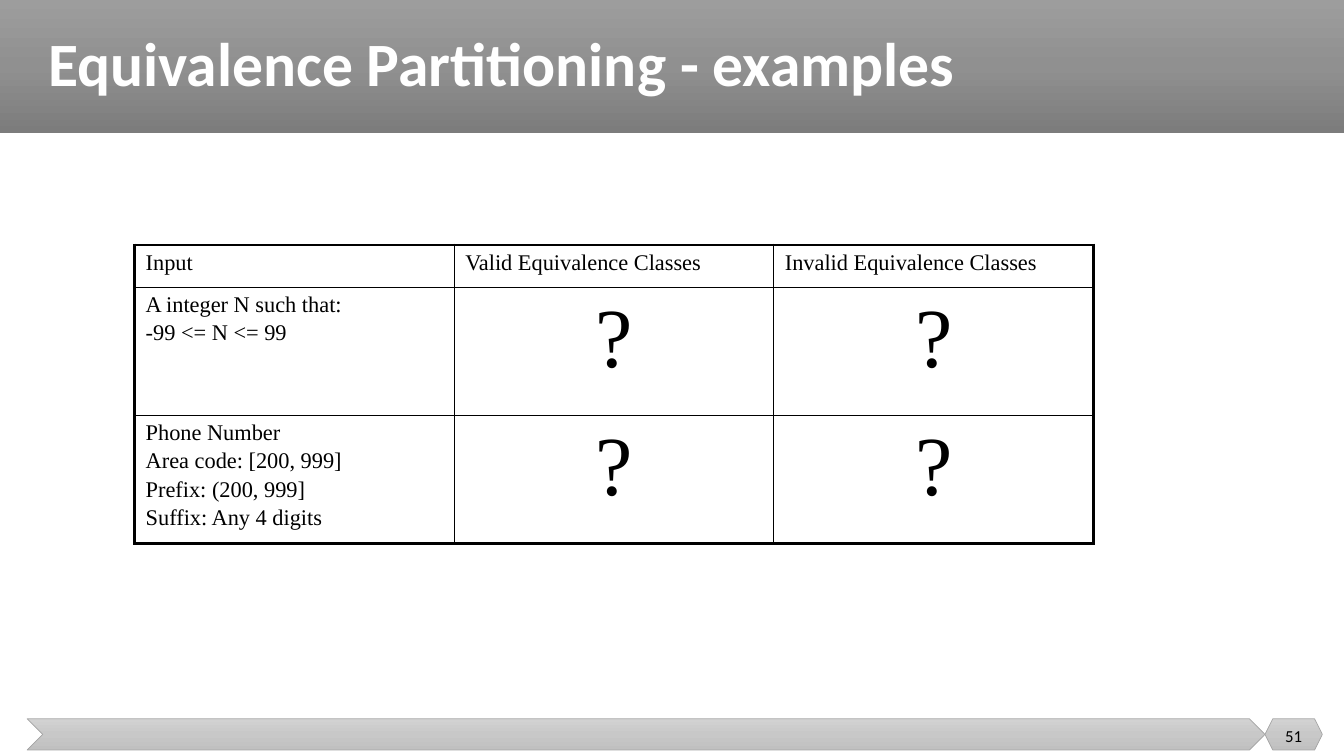
from copy import deepcopy
from lxml import etree
from pptx import Presentation
from pptx.dml.color import RGBColor
from pptx.enum.shapes import MSO_SHAPE
from pptx.enum.text import MSO_ANCHOR, PP_ALIGN
from pptx.oxml.ns import qn
from pptx.util import Pt

RECT, CHEVRON, HEXAGON = MSO_SHAPE.RECTANGLE, MSO_SHAPE.CHEVRON, MSO_SHAPE.HEXAGON
MIDDLE, LEFT, CENTER = MSO_ANCHOR.MIDDLE, PP_ALIGN.LEFT, PP_ALIGN.CENTER

# Content
TITLE = "Equivalence Partitioning - examples"
PAGE = "51"
ROWS = [
    ["Input", "Valid Equivalence Classes", "Invalid Equivalence Classes"],
    ["A integer N such that:\n-99 <= N <= 99", "?", "?"],
    ["Phone Number\nArea code: [200, 999]\nPrefix: (200, 999]\nSuffix: Any 4 digits", "?", "?"],
]

# Layout, in points
WIDTH, HEIGHT = 960, 540
BAND = 95
FOOT_Y, FOOT_H = 513.4, 22.4
ARROW_X, PAGE_X, PAGE_W = 19.4, 903.6, 41
TABLE_X, TABLE_Y, COL_W = 96.2, 175, 228.3
ROW_H = [30.2, 91.4, 91.4]
THICK, THIN = 2.25, 1
DARK = ["9D9D9D", "909090", "7C7C7C"]
LIGHT = ["D2D2D2", "C8C8C8", "C0C0C0"]


def color(code):
    return RGBColor.from_string(code)


def bar(kind, x, y, w, h, tones, edge=None):
    shape = slide.shapes.add_shape(kind, Pt(x), Pt(y), Pt(w), Pt(h))
    shape.shadow.inherit = False
    fill = shape.fill
    fill.gradient()
    fill.gradient_angle = 270
    stops = shape._element.spPr.find(".//" + qn("a:gsLst"))
    stops.insert(1, deepcopy(stops[0]))
    for i, (stop, tone) in enumerate(zip(fill.gradient_stops, tones)):
        stop.position = i / 2
        stop.color.rgb = color(tone)
    if edge:
        shape.line.color.rgb = color(edge)
        shape.line.width = Pt(0.5)
    else:
        shape.line.fill.background()


def style(para, font, size, tone, bold=False):
    for run in para.runs:
        run.font.name = font
        run.font.size = Pt(size)
        run.font.bold = bold
        run.font.color.rgb = color(tone)


def label(text, x, y, w, h, size, tone, align, bold=False):
    frame = slide.shapes.add_textbox(Pt(x), Pt(y), Pt(w), Pt(h)).text_frame
    frame.word_wrap = True
    frame.vertical_anchor = MIDDLE
    frame.text = text
    para = frame.paragraphs[0]
    para.alignment = align
    style(para, "Calibri", size, tone, bold)
    return para


def border(cell, side, width):
    line = etree.SubElement(cell._tc.get_or_add_tcPr(), qn("a:ln" + side),
                            w=str(Pt(width)))
    fill = etree.SubElement(line, qn("a:solidFill"))
    etree.SubElement(fill, qn("a:srgbClr"), val="000000")


deck = Presentation()
deck.slide_width, deck.slide_height = Pt(WIDTH), Pt(HEIGHT)
slide = deck.slides.add_slide(deck.slide_layouts[6])

# Header and footer
bar(RECT, 0, 0, WIDTH, BAND, DARK)
bar(CHEVRON, ARROW_X, FOOT_Y, PAGE_X - ARROW_X, FOOT_H, LIGHT, "A5A5A5")
bar(HEXAGON, PAGE_X, FOOT_Y, PAGE_W, FOOT_H, LIGHT, "A5A5A5")
head = label(TITLE, 27.4, 0, 917, BAND, 44, "FFFFFF", LEFT, True)
head.line_spacing = 0.9
label(PAGE, PAGE_X, 511.2, PAGE_W, 28.8, 12, "000000", CENTER)

# Table
rows, cols = len(ROWS), len(ROWS[0])
table = slide.shapes.add_table(rows, cols, Pt(TABLE_X), Pt(TABLE_Y),
                               Pt(COL_W * cols), Pt(sum(ROW_H))).table
table.first_row = table.horz_banding = False
for col in table.columns:
    col.width = Pt(COL_W)
for row, high in zip(table.rows, ROW_H):
    row.height = Pt(high)

for r, texts in enumerate(ROWS):
    for c, text in enumerate(texts):
        cell = table.cell(r, c)
        cell.margin_left = cell.margin_right = Pt(7.9)
        cell.margin_top = cell.margin_bottom = Pt(3.6)
        cell.text_frame.text = text
        mark = text == "?"
        for i, para in enumerate(cell.text_frame.paragraphs):
            para.alignment = CENTER if mark else LEFT
            para.space_before = Pt(2.5 if i else 0)
            style(para, "Times New Roman", 60 if mark else 16, "000000")
        # Thick outside, thin inside
        outer = {"L": c == 0, "R": c == cols - 1, "T": r == 0, "B": r == rows - 1}
        for side, edge in outer.items():
            border(cell, side, THICK if edge else THIN)
        cell.fill.background()

deck.save("out.pptx")
